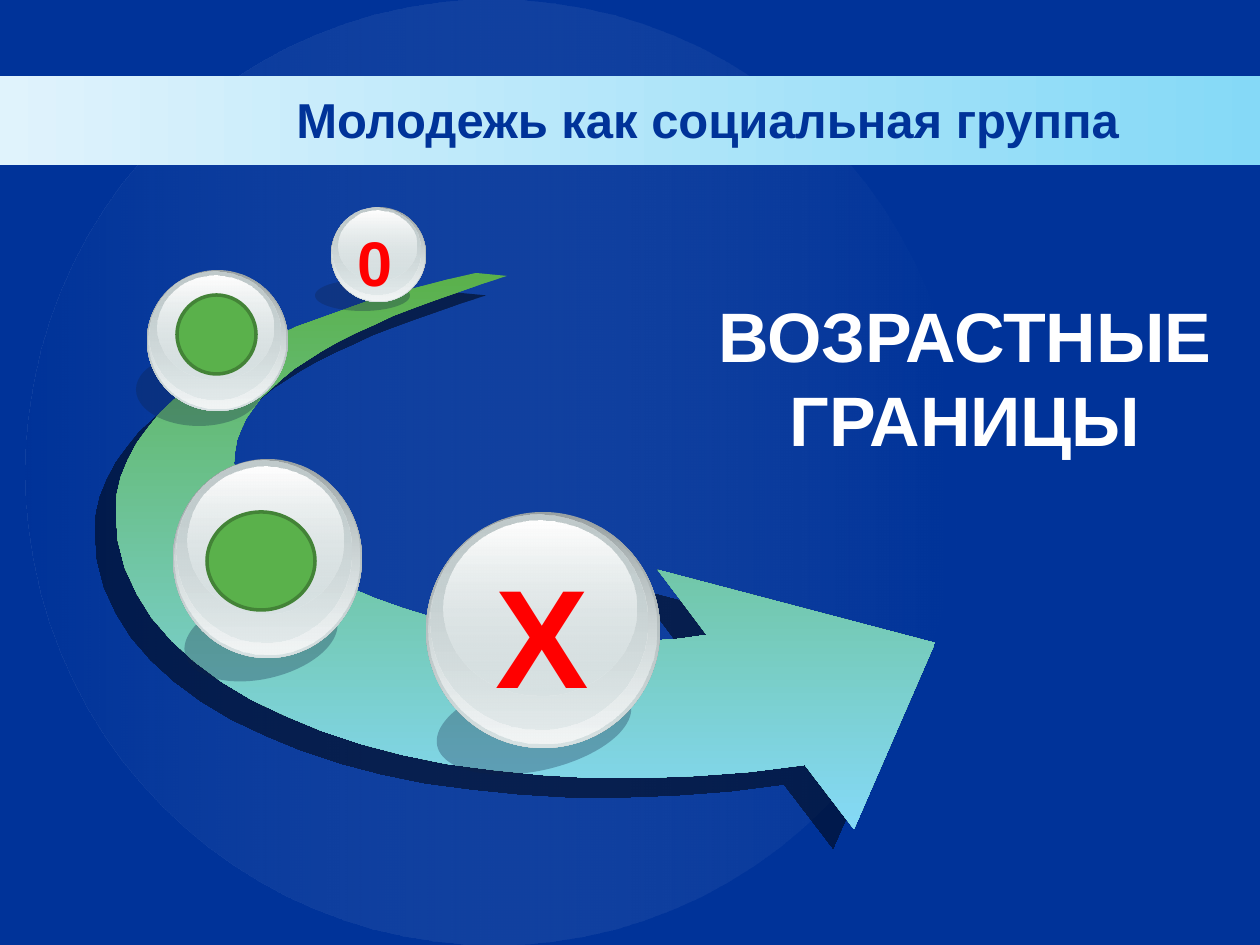
import pptx
import pptx.dml.color
import pptx.enum.shapes
import pptx.enum.text
import pptx.oxml
import pptx.oxml.ns
import pptx.util

SCALE = 914400 / 126
CURVE_STEPS = 20
SHAPE = pptx.enum.shapes.MSO_SHAPE
ALIGN = pptx.enum.text.PP_ALIGN
ANCHOR = pptx.enum.text.MSO_ANCHOR
NAMESPACE = pptx.oxml.ns.nsdecls("a")

NAVY, GREEN, SKY, RED, WHITE = "003399", "5AB14B", "85D9F7", "FF0000", "FFFFFF"
SHADOW_NAVY, DISC_OUTLINE = "0F2145", "438337"

SPHERE_LAYERS = [
    ((0, 0, 1, 1), (("99A1A2", 100), ("D6E1E2", 100))),
    ((0.01, 0.005, 0.975, 0.975), (("D6E1E2", 0), ("F2F5F5", 100))),
    ((0.02, 0.01, 0.925, 0.91), (("C1CBCC", 100), ("D6E1E2", 48))),
    ((0.075, 0.037, 0.825, 0.74), ((WHITE, 100), ("D6E1E2", 38))),
]
SPHERES = [
    {"box": (426, 512, 234, 236), "shadow_box": (435, 679, 198, 92), "rotation": 347.9},
    {"box": (173, 459, 189, 199), "shadow_box": (183, 595, 156, 84), "rotation": 347.1},
    {"box": (147, 270, 141, 141), "shadow_box": (136, 353, 126, 73), "rotation": 0},
    {"box": (331, 207, 95, 95), "shadow_box": (315, 280, 95, 31), "rotation": 0},
]
GREEN_DISCS = [(177, 295, 79, 79), (207, 512, 108, 98)]

TAIL_OUTER, TAIL_INNER = (476, 273), (507, 276)
BEND_OUTER, BEND_INNER = (116, 513), (234, 463)
NECK_OUTER, NECK_INNER = (805, 765), (707, 635)
BARB_OUTER, TIP, BARB_INNER = (854, 829), (935, 643), (658, 570)
OUTER_EDGE = [
    (TAIL_OUTER, (300, 311), (116, 387), BEND_OUTER),
    (BEND_OUTER, (116, 704), (436, 819), NECK_OUTER),
]
INNER_EDGE = [
    (NECK_INNER, (523, 667), (234, 588), BEND_INNER),
    (BEND_INNER, (234, 386), (339, 328), TAIL_INNER),
]


def px(length):
    """Turn pixels into EMU."""
    return pptx.util.Emu(round(length * SCALE))


def color(value):
    """Return the colour for a hex string."""
    return pptx.dml.color.RGBColor.from_string(value)


def color_xml(value, opacity):
    """Return the XML of a colour with an opacity in percent."""
    return f'<a:srgbClr val="{value}"><a:alpha val="{opacity * 1000}"/></a:srgbClr>'


def set_gradient(shape, stops, angle):
    """Fill a shape with a two-stop linear gradient."""
    start, end = (color_xml(*stop) for stop in stops)
    shape.fill.background()
    old_fill = shape._element.spPr.find(pptx.oxml.ns.qn("a:noFill"))
    gradient = pptx.oxml.parse_xml(
        f'<a:gradFill {NAMESPACE} rotWithShape="1"><a:gsLst><a:gs pos="0">{start}</a:gs>'
        f'<a:gs pos="100000">{end}</a:gs></a:gsLst>'
        f'<a:lin ang="{angle * 60000}" scaled="0"/></a:gradFill>')
    shape._element.spPr.replace(old_fill, gradient)


def set_solid(shape, value):
    """Fill a shape with one colour."""
    shape.fill.solid()
    shape.fill.fore_color.rgb = color(value)


def add_plain_shape(slide, kind, box):
    """Add a preset shape without line or shadow."""
    shape = slide.shapes.add_shape(kind, *map(px, box))
    shape.shadow.inherit = False
    shape.line.fill.background()
    return shape


def add_gradient_shape(slide, kind, box, stops, angle):
    """Add a preset shape with a gradient fill."""
    set_gradient(add_plain_shape(slide, kind, box), stops, angle)


def add_sphere(slide, box, shadow_box, rotation):
    """Add a glossy sphere of nested ellipses above its cast shadow."""
    shadow = add_plain_shape(slide, SHAPE.OVAL, shadow_box)
    shadow.rotation = rotation
    set_solid(shadow, SHADOW_NAVY)
    solid_color = shadow._element.spPr.find(pptx.oxml.ns.qn("a:solidFill"))[0]
    solid_color.append(pptx.oxml.parse_xml(f'<a:alpha {NAMESPACE} val="30000"/>'))
    left, top, width, height = box
    for (x, y, across, down), stops in SPHERE_LAYERS:
        layer = (left + x * width, top + y * height, across * width, down * height)
        add_gradient_shape(slide, SHAPE.OVAL, layer, stops, 90)


def curve_points(start, start_handle, end_handle, end):
    """Return evenly stepped points along a cubic Bezier curve."""
    points = []
    for step in range(CURVE_STEPS + 1):
        t = step / CURVE_STEPS
        weights = ((1 - t) ** 3, 3 * t * (1 - t) ** 2, 3 * t ** 2 * (1 - t), t ** 3)
        controls = (start, start_handle, end_handle, end)
        points.append(tuple(sum(weight * control[axis]
                                for weight, control in zip(weights, controls))
                            for axis in (0, 1)))
    return points


def edge_points(curves):
    """Return the points of several curves in a row."""
    return [point for curve in curves for point in curve_points(*curve)]


def add_curved_arrow(slide):
    """Add the sweeping arrow with its offset shadow."""
    head = [BARB_OUTER, TIP, BARB_INNER]
    outline = edge_points(OUTER_EDGE) + head + edge_points(INNER_EDGE)
    builder = slide.shapes.build_freeform(*outline[0], scale=SCALE)
    builder.add_line_segments(outline[1:], close=True)
    arrow = builder.convert_to_shape()
    arrow.shadow.inherit = False
    arrow.line.fill.background()
    set_gradient(arrow, ((GREEN, 100), (SKY, 100)), 90)
    effects = arrow._element.spPr.find(pptx.oxml.ns.qn("a:effectLst"))
    effects.append(pptx.oxml.parse_xml(
        f'<a:outerShdw {NAMESPACE} blurRad="0" dist="{pptx.util.Pt(16.3)}" '
        f'dir="{137 * 60000}" algn="ctr" rotWithShape="0">'
        f'{color_xml("000000", 50)}</a:outerShdw>'))


def add_green_disc(slide, box):
    """Add an outlined green disc."""
    disc = add_plain_shape(slide, SHAPE.FLOWCHART_CONNECTOR, box)
    set_solid(disc, GREEN)
    disc.line.color.rgb = color(DISC_OUTLINE)
    disc.line.width = pptx.util.Pt(2)


def add_text(slide, box, lines, size, text_color, align=ALIGN.CENTER,
             anchor=ANCHOR.TOP, wrap=True):
    """Add bold text with one paragraph per line."""
    frame = slide.shapes.add_textbox(*map(px, box)).text_frame
    frame.word_wrap = wrap
    frame.vertical_anchor = anchor
    frame.text = "\n".join(lines)
    for paragraph in frame.paragraphs:
        paragraph.alignment = align
        paragraph.font.name = "Arial"
        paragraph.font.size = pptx.util.Pt(size)
        paragraph.font.bold = True
        paragraph.font.color.rgb = color(text_color)


def main():
    """Build the slide and save it."""
    presentation = pptx.Presentation()
    presentation.slide_width, presentation.slide_height = px(1260), px(945)
    slide = presentation.slides.add_slide(presentation.slide_layouts[6])
    set_solid(slide.background, NAVY)
    add_gradient_shape(slide, SHAPE.OVAL, (25, 0, 937, 945), ((NAVY, 27), (WHITE, 0)), 0)
    add_gradient_shape(slide, SHAPE.RECTANGLE, (0, 76, 1260, 89),
                       (("E0F3FC", 100), (SKY, 100)), 0)
    add_text(slide, (284, 80, 872, 78), ["Молодежь как социальная группа"], 28, NAVY,
             align=ALIGN.LEFT, anchor=ANCHOR.MIDDLE)
    add_curved_arrow(slide)
    add_text(slide, (699, 286, 532, 183), ["ВОЗРАСТНЫЕ", "ГРАНИЦЫ"], 40, WHITE)
    for sphere in SPHERES:
        add_sphere(slide, **sphere)
    add_text(slide, (482, 542, 120, 183), ["Х"], 80, RED, wrap=False)
    add_text(slide, (345, 217, 60, 89), ["0"], 36, RED, wrap=False)
    for box in GREEN_DISCS:
        add_green_disc(slide, box)
    presentation.save("out.pptx")


if __name__ == "__main__":
    main()
